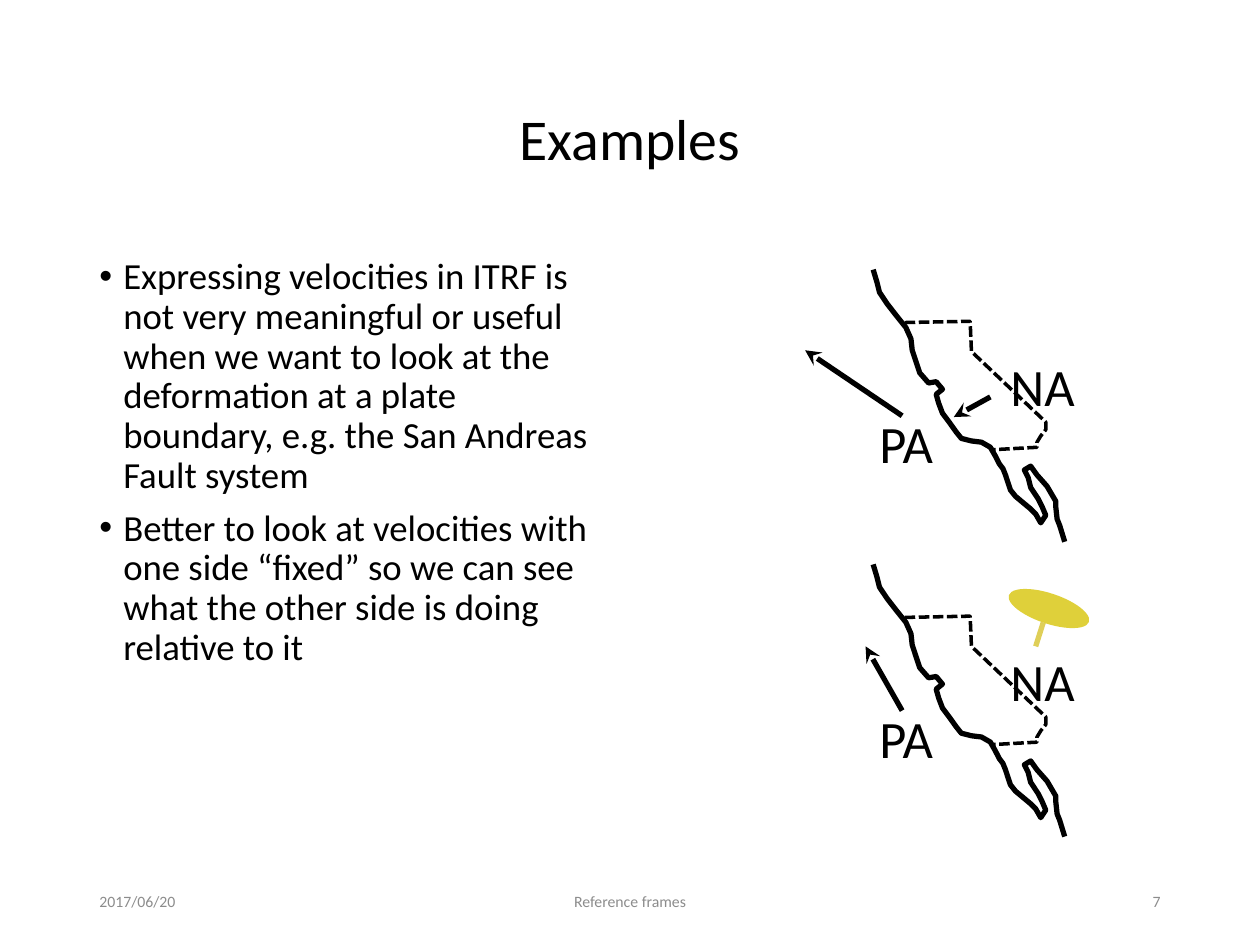
from lxml.etree import SubElement
from pptx import Presentation
from pptx.dml.color import RGBColor
from pptx.enum.dml import MSO_LINE
from pptx.enum.shapes import MSO_CONNECTOR, MSO_SHAPE
from pptx.enum.text import MSO_ANCHOR, MSO_AUTO_SIZE, PP_ALIGN
from pptx.oxml.ns import qn
from pptx.util import Pt

SCALE = 9144  # EMU per px, 100 px to the inch
FONT = "Calibri"
BLACK = RGBColor(0x00, 0x00, 0x00)
GREY = RGBColor(0x8C, 0x8C, 0x8C)
PIN_HEAD = RGBColor(0xDF, 0xD0, 0x3A)
PIN_STEM = RGBColor(0xDF, 0xCF, 0x58)

BULLETS = [
    "Expressing velocities in ITRF is not very meaningful or useful when we want "
    "to look at the deformation at a plate boundary, e.g. the San Andreas Fault system",
    "Better to look at velocities with one side “fixed” so we can see what the "
    "other side is doing relative to it",
]
FOOTERS = [
    ("2017/06/20", 69, 225, PP_ALIGN.LEFT),
    ("Reference frames", 331, 338, PP_ALIGN.CENTER),
    ("7", 706, 225, PP_ALIGN.RIGHT),
]

# Outlines of the upper map; the lower map is the same, moved down
MAP_STEP = 234
COAST = [
    (693, 214), (696, 224), (698, 232), (704, 241), (711, 250), (719, 260),
    (723, 269), (724, 278), (727, 287), (730, 296), (737, 304), (743, 303),
    (748, 309), (743, 313), (745, 320), (748, 328), (754, 336), (759, 343),
    (763, 348), (771, 350), (779, 351), (786, 355), (790, 362), (793, 368),
    (796, 372), (798, 377), (800, 383), (802, 389), (806, 394), (812, 399),
    (818, 404), (822, 408), (826, 415), (830, 409), (827, 402), (824, 396),
    (818, 387), (816, 379), (813, 373), (818, 370), (823, 377), (831, 386),
    (838, 398), (838, 403), (839, 412), (841, 417), (845, 430),
]
STATE_BORDER = [
    (718, 256), (770, 255), (771, 279), (830, 335), (830, 341),
    (826, 346), (823, 351), (823, 355), (786, 357),
]


def px(*lengths):
    return [length * SCALE for length in lengths]


def add_run(para, text, size, color=BLACK):
    span = para.add_run()
    span.text = text
    span.font.name = FONT
    span.font.size = Pt(size)
    span.font.color.rgb = color


def set_title(page, text):
    title = page.shapes.title
    title.left, title.top, title.width, title.height = px(69, 40, 862, 145)
    title.text_frame.vertical_anchor = MSO_ANCHOR.MIDDLE
    para = title.text_frame.paragraphs[0]
    para.alignment = PP_ALIGN.CENTER
    para.line_spacing = 0.9
    add_run(para, text, 33)


def add_bullets(page, texts):
    frame = page.shapes.add_textbox(*px(69, 200, 425, 476)).text_frame
    frame.word_wrap = True
    for index, text in enumerate(texts):
        para = frame.add_paragraph() if index else frame.paragraphs[0]
        para.line_spacing = 0.9
        para.space_before = Pt(7.5)
        properties = para._p.get_or_add_pPr()
        properties.set("marL", str(19 * SCALE))
        properties.set("indent", str(-19 * SCALE))
        SubElement(properties, qn("a:buFont"), typeface="Arial")
        SubElement(properties, qn("a:buChar"), char="•")
        add_run(para, text, 21)


def add_footer(page, text, left, width, alignment):
    frame = page.shapes.add_textbox(*px(left, 695, width, 40)).text_frame
    frame.word_wrap = True
    frame.vertical_anchor = MSO_ANCHOR.MIDDLE
    frame.paragraphs[0].alignment = alignment
    add_run(frame.paragraphs[0], text, 9, GREY)


def add_outline(group, points, drop, weight, dash=None):
    (start_x, start_y), *rest = [(x, y + drop) for x, y in points]
    builder = group.shapes.build_freeform(start_x, start_y, scale=SCALE)
    builder.add_line_segments(rest, close=False)
    outline = builder.convert_to_shape()
    outline.shadow.inherit = False
    outline.fill.background()
    outline.line.color.rgb = BLACK
    outline.line.width = Pt(weight)
    if dash:
        outline.line.dash_style = dash


def add_line(group, start, end, color=BLACK, arrow=False):
    line = group.shapes.add_connector(MSO_CONNECTOR.STRAIGHT, *px(*start, *end))
    line.line.color.rgb = color
    line.line.width = Pt(3)
    if arrow:
        SubElement(line.line._get_or_add_ln(), qn("a:headEnd"), type="stealth")
    SubElement(line._element.spPr, qn("a:effectLst"))


def add_plate_label(group, text, left, top, width):
    frame = group.shapes.add_textbox(*px(left, top, width, 62)).text_frame
    frame.margin_left = frame.margin_right = 6 * SCALE
    frame.margin_top = frame.margin_bottom = 6 * SCALE
    frame.word_wrap = False
    frame.auto_size = MSO_AUTO_SIZE.SHAPE_TO_FIT_TEXT
    frame.vertical_anchor = MSO_ANCHOR.MIDDLE
    add_run(frame.paragraphs[0], text, 30)


def add_map(page, drop, arrows):
    group = page.shapes.add_group_shape()
    add_outline(group, COAST, drop, 3)
    add_outline(group, STATE_BORDER, drop, 2, MSO_LINE.SQUARE_DOT)
    for tip, tail in arrows:
        add_line(group, tip, tail, arrow=True)
    add_plate_label(group, "PA", 692, 320 + drop, 57)
    add_plate_label(group, "NA", 796, 275 + drop, 63)
    return group


def add_pin(group):
    head = group.shapes.add_shape(MSO_SHAPE.OVAL, *px(799, 471, 67, 24))
    head.rotation = 18.4
    head.shadow.inherit = False
    head.fill.solid()
    head.fill.fore_color.rgb = PIN_HEAD
    head.line.fill.background()
    add_line(group, (828, 494), (822, 513), PIN_STEM)


def main():
    deck = Presentation()
    deck.slide_width, deck.slide_height = px(1000, 750)
    page = deck.slides.add_slide(deck.slide_layouts[5])

    # Text
    set_title(page, "Examples")
    add_bullets(page, BULLETS)
    for footer in FOOTERS:
        add_footer(page, *footer)

    # Both plates moving, then the North American side pinned
    add_map(page, 0, [((639, 278), (716, 330)), ((757, 331), (786, 315))])
    pinned_map = add_map(page, MAP_STEP, [((687, 513), (716, 564))])
    add_pin(pinned_map)

    deck.save("out.pptx")


if __name__ == "__main__":
    main()
